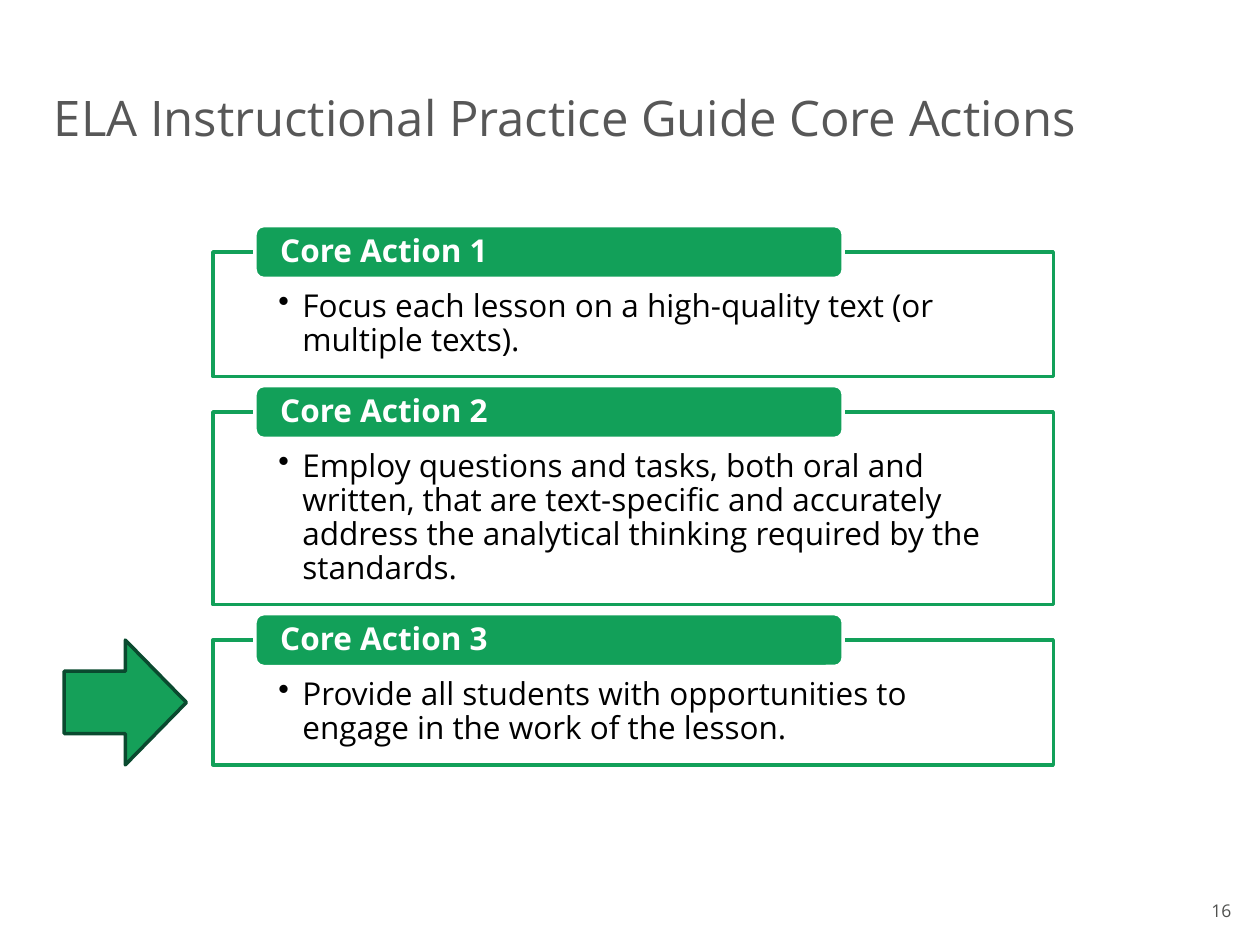
from dataclasses import dataclass
from lxml.etree import SubElement
from pptx import Presentation
from pptx.dml.color import RGBColor
from pptx.enum.shapes import MSO_SHAPE
from pptx.enum.text import MSO_ANCHOR, PP_ALIGN
from pptx.oxml.ns import qn
from pptx.util import Inches, Pt


@dataclass(frozen=True)
class Theme:
    font: str = "Open Sans"
    green: str = "12A059"
    arrow: str = "15A059"
    edge: str = "0A4A2F"
    white: str = "FFFFFF"
    black: str = "000000"
    title: str = "575757"
    number: str = "50514F"
    big: int = 28
    body: int = 18
    small: int = 10
    line: int = 2


@dataclass(frozen=True)
class Box:
    """A place on a grid of 100 columns by 75 rows."""
    col: float
    row: float
    wide: float
    high: float

    def place(self):
        return [unit(n) for n in (self.col, self.row, self.wide, self.high)]


THEME = Theme()
ACTIONS = [
    ("Core Action 1", 9.9,
     "Focus each lesson on a high-quality text (or multiple texts)."),
    ("Core Action 2", 15.3,
     "Employ questions and tasks, both oral and written, that are "
     "text-specific and accurately address the analytical thinking "
     "required by the standards."),
    ("Core Action 3", 9.9,
     "Provide all students with opportunities to engage in the work "
     "of the lesson."),
]


def unit(n):
    return Inches(n / 10)


def color(code):
    return RGBColor.from_string(code)


def draw(slide, kind, box, fill, line):
    shape = slide.shapes.add_shape(kind, *box.place())
    shape.shadow.inherit = False
    shape.fill.solid()
    shape.fill.fore_color.rgb = color(fill)
    shape.line.color.rgb = color(line)
    shape.line.width = Pt(THEME.line)
    return shape


def write(shape, text, size, tint, pads, anchor=MSO_ANCHOR.TOP,
          align=PP_ALIGN.LEFT, bold=False, space=None):
    frame = shape.text_frame
    frame.word_wrap = True
    frame.vertical_anchor = anchor
    frame.margin_left = frame.margin_right = unit(pads[0])
    frame.margin_top, frame.margin_bottom = unit(pads[1]), unit(pads[2])
    para = frame.paragraphs[0]
    para.alignment = align
    para.line_spacing = space
    run = para.add_run()
    run.text = text
    run.font.name = THEME.font
    run.font.size = Pt(size)
    run.font.bold = bold
    run.font.color.rgb = color(tint)
    return para


def bullet(para, indent):
    props = para._p.get_or_add_pPr()
    props.set("marL", str(indent))
    props.set("indent", str(-indent))
    tint = SubElement(props, qn("a:buClr"))
    SubElement(tint, qn("a:srgbClr"), val=THEME.black)
    SubElement(props, qn("a:buChar"), char="•")


def fade(shape, share):
    tint = shape.fill._xPr.find(qn("a:solidFill"))[0]
    SubElement(tint, qn("a:alpha"), val=str(share * 1000))


def label(slide, box, text, size, tint, pads, **style):
    shape = slide.shapes.add_textbox(*box.place())
    write(shape, text, size, tint, pads, **style)


def action(slide, box, name, text):
    # Framed body
    body = draw(slide, MSO_SHAPE.RECTANGLE, box, THEME.white, THEME.green)
    fade(body, 90)
    para = write(body, text, THEME.body, THEME.black, (5.2, 3, 1.4), space=0.9)
    bullet(para, unit(1.9))
    # Tab centred on the top edge of the body
    high = 4.2
    spot = Box(box.col + box.wide * 0.05, box.row - high / 2,
               box.wide * 0.7, high)
    tab = draw(slide, MSO_SHAPE.ROUNDED_RECTANGLE, spot,
               THEME.green, THEME.white)
    tab.adjustments[0] = 0.167
    write(tab, name, THEME.body, THEME.white, (1.8, 0, 0),
          anchor=MSO_ANCHOR.MIDDLE, bold=True, space=0.9)


def stack(slide, box, gap):
    row = box.row
    for name, high, text in ACTIONS:
        spot = Box(box.col, row, box.wide, high)
        action(slide, spot, name, text)
        row += high + gap
    return spot


def pointer(slide, box, wide, gap):
    # Arrow to the left of the box it marks
    spot = Box(box.col - gap - wide, box.row, wide, box.high)
    draw(slide, MSO_SHAPE.RIGHT_ARROW, spot, THEME.arrow, THEME.edge)


def main():
    deck = Presentation()
    deck.slide_width, deck.slide_height = unit(100), unit(75)
    slide = deck.slides.add_slide(deck.slide_layouts[6])
    # Page number
    label(slide, Box(82.8, 70.9, 15.9, 2.7), "16", THEME.small,
          THEME.number, (1, 0.5, 0.5), align=PP_ALIGN.RIGHT)
    # Title
    label(slide, Box(3.3, 3, 93.8, 12.5),
          "ELA Instructional Practice Guide Core Actions", THEME.big,
          THEME.title, (1, 1, 1), anchor=MSO_ANCHOR.MIDDLE)
    # Core actions, with the last one marked
    last = stack(slide, Box(16.9, 20, 66.7, 40.7), gap=2.8)
    pointer(slide, last, wide=9.7, gap=2.1)
    deck.save("out.pptx")


if __name__ == "__main__":
    main()
